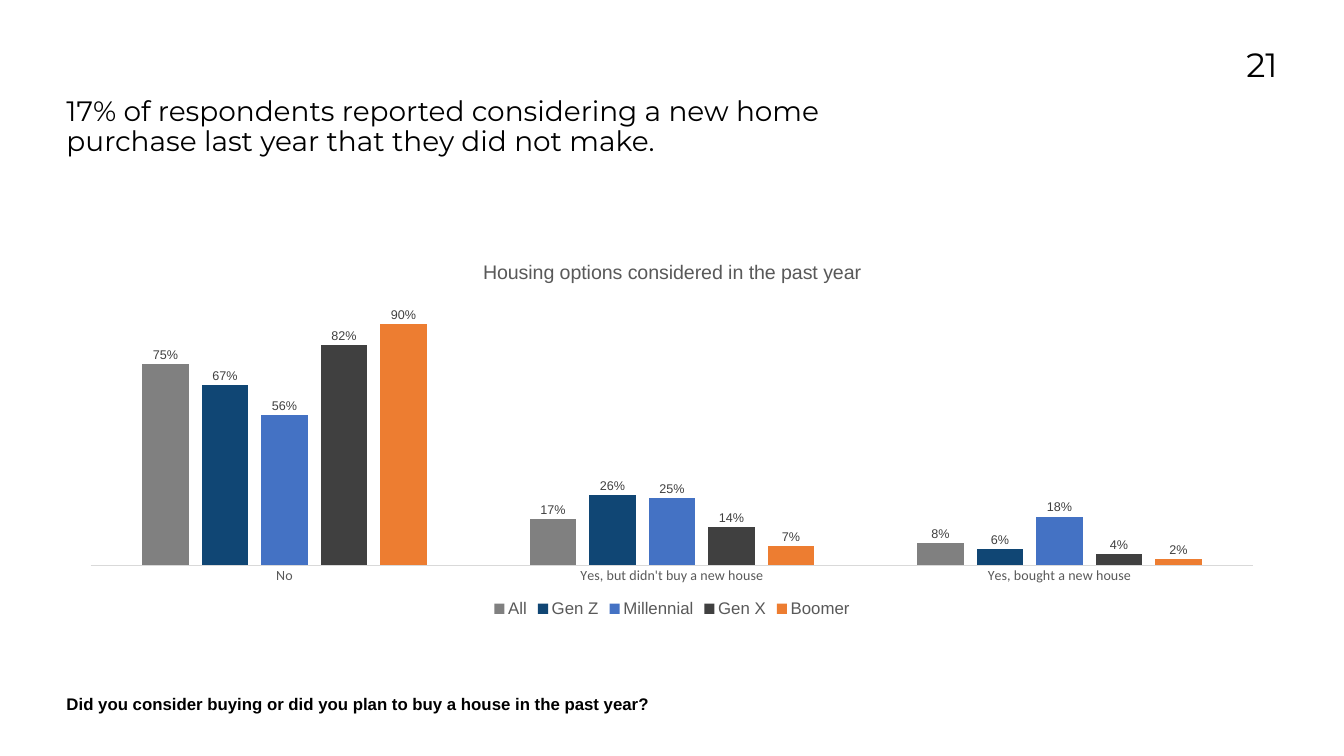
import pptx
import pptx.chart.data
import pptx.dml.color
import pptx.enum.chart
import pptx.enum.text
import pptx.oxml
import pptx.oxml.ns
import pptx.util

Pt = pptx.util.Pt
RGBColor = pptx.dml.color.RGBColor
ALIGN = pptx.enum.text.PP_ALIGN

BLACK = RGBColor(0x00, 0x00, 0x00)
LABEL_GREY = RGBColor(0x40, 0x40, 0x40)
TEXT_GREY = RGBColor(0x59, 0x59, 0x59)
AXIS_GREY = RGBColor(0xD9, 0xD9, 0xD9)

GENERATIONS = [
    ("All", (0.75, 0.17, 0.08), RGBColor(0x80, 0x80, 0x80)),
    ("Gen Z", (0.67, 0.26, 0.06), RGBColor(0x10, 0x46, 0x74)),
    ("Millennial", (0.56, 0.25, 0.18), RGBColor(0x44, 0x72, 0xC4)),
    ("Gen X", (0.82, 0.14, 0.04), RGBColor(0x40, 0x40, 0x40)),
    ("Boomer", (0.9, 0.07, 0.02), RGBColor(0xED, 0x7D, 0x31)),
]
ANSWERS = ["No", "Yes, but didn't buy a new house", "Yes, bought a new house"]
PLOT_BOX = {"x": 0.02, "y": 0.136, "w": 0.96, "h": 0.713}


def set_font(font, size, name, color, bold=False):
    """Give a font its size, typeface, colour and weight."""
    font.size = Pt(size)
    font.name = name
    font.color.rgb = color
    font.bold = bold


def write_text(frame, text, size, name="Arial", color=BLACK, bold=False,
               align=ALIGN.LEFT, spacing=1.0):
    """Fill a text frame that has no margins with one formatted paragraph."""
    frame.margin_left = frame.margin_right = 0
    frame.margin_top = frame.margin_bottom = 0
    frame.word_wrap = True
    frame.auto_size = pptx.enum.text.MSO_AUTO_SIZE.NONE
    frame.vertical_anchor = pptx.enum.text.MSO_ANCHOR.TOP
    paragraph = frame.paragraphs[0]
    paragraph.alignment = align
    paragraph.line_spacing = spacing
    paragraph.space_before = Pt(0)
    run = paragraph.add_run()
    run.text = text
    set_font(run.font, size, name, color, bold)


def add_headline(slide, left, top, width, height):
    """Place the finding in the title placeholder."""
    headline = slide.shapes.title
    headline.left, headline.top = Pt(left), Pt(top)
    headline.width, headline.height = Pt(width), Pt(height)
    write_text(
        headline.text_frame,
        "17% of respondents reported considering a new home purchase "
        "last year that they did not make.",
        size=40, name="Montserrat", spacing=0.9)


def add_label(slide, left, top, width, height, text, **text_format):
    """Add a text box with one formatted paragraph."""
    label = slide.shapes.add_textbox(Pt(left), Pt(top), Pt(width), Pt(height))
    write_text(label.text_frame, text, **text_format)


def fix_plot_area(chart):
    """Pin the inner plot area to PLOT_BOX, in fractions of the chart."""
    plot_area = chart._chartSpace.chart.plotArea
    for layout in plot_area.findall(pptx.oxml.ns.qn("c:layout")):
        plot_area.remove(layout)
    places = "".join(f'<c:{side} val="{share}"/>' for side, share in PLOT_BOX.items())
    plot_area.insert(0, pptx.oxml.parse_xml(
        f'<c:layout {pptx.oxml.ns.nsdecls("c")}><c:manualLayout>'
        '<c:layoutTarget val="inner"/><c:xMode val="edge"/><c:yMode val="edge"/>'
        f'{places}</c:manualLayout></c:layout>'))


def add_housing_chart(slide, left, top, width, height):
    """Add the clustered columns of answers by generation."""
    answers = pptx.chart.data.CategoryChartData(number_format="0%")
    answers.categories = ANSWERS
    for generation, shares, _ in GENERATIONS:
        answers.add_series(generation, shares)
    chart = slide.shapes.add_chart(
        pptx.enum.chart.XL_CHART_TYPE.COLUMN_CLUSTERED,
        Pt(left), Pt(top), Pt(width), Pt(height), answers).chart
    set_font(chart.font, 10, "Calibri", BLACK)

    chart.has_title = True
    heading = chart.chart_title.text_frame.paragraphs[0].add_run()
    heading.text = "Housing options considered in the past year"
    set_font(heading.font, 28, "Arial", TEXT_GREY)
    chart.chart_title.include_in_layout = False

    chart.has_legend = True
    chart.legend.position = pptx.enum.chart.XL_LEGEND_POSITION.BOTTOM
    chart.legend.include_in_layout = False
    set_font(chart.legend.font, 24, "Arial", TEXT_GREY)

    answer_axis = chart.category_axis
    answer_axis.major_tick_mark = pptx.enum.chart.XL_TICK_MARK.NONE
    answer_axis.format.line.color.rgb = AXIS_GREY
    answer_axis.format.line.width = Pt(0.75)
    set_font(answer_axis.tick_labels.font, 20, "Calibri", TEXT_GREY)

    share_axis = chart.value_axis
    share_axis.minimum_scale, share_axis.maximum_scale = 0, 1
    share_axis.has_major_gridlines = False
    share_axis.visible = False

    columns = chart.plots[0]
    columns.gap_width, columns.overlap = 219, -27
    columns.vary_by_categories = False
    for series, (_, _, color) in zip(columns.series, GENERATIONS):
        series.format.fill.solid()
        series.format.fill.fore_color.rgb = color
        labels = series.data_labels
        labels.show_value = True
        labels.position = pptx.enum.chart.XL_LABEL_POSITION.OUTSIDE_END
        labels.number_format = "0%"
        labels.number_format_is_linked = False
        set_font(labels.font, 18, "Arial", LABEL_GREY)
    fix_plot_area(chart)


def main():
    """Build the slide and save it."""
    deck = pptx.Presentation()
    deck.slide_width, deck.slide_height = Pt(1920), Pt(1080)
    slide = deck.slides.add_slide(deck.slide_layouts[5])
    margin, content_width = 95, 1730
    number_width = 162

    add_label(slide, margin + content_width - number_width, 63, number_width, 118,
              "21", size=48, name="Montserrat", align=ALIGN.RIGHT)
    add_housing_chart(slide, margin, 351, content_width, 537)
    add_headline(slide, margin, 139, 1153, 150)
    add_label(slide, margin, 976, 955, 47,
              "Did you consider buying or did you plan to buy a house in the past year?",
              size=24, bold=True, spacing=1.5)
    deck.save("out.pptx")


if __name__ == "__main__":
    main()
